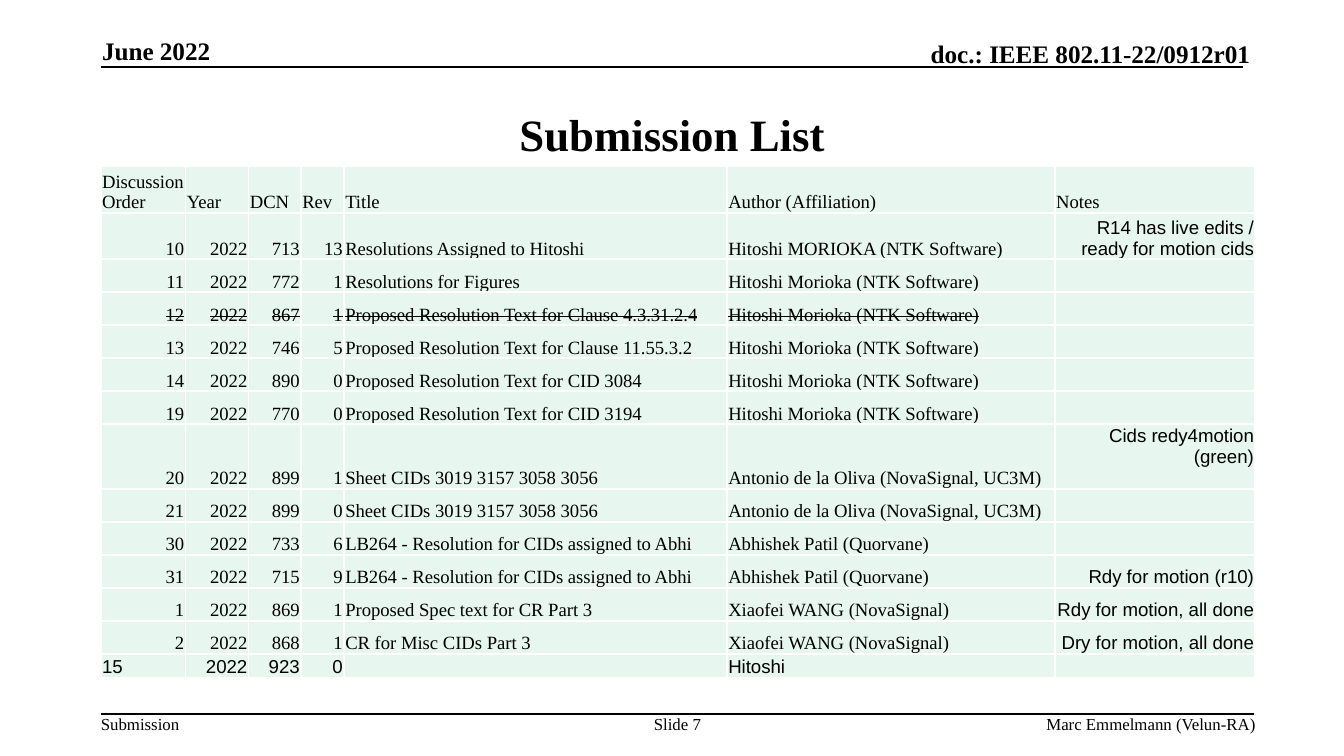
from lxml import etree
from pptx import Presentation
from pptx.dml.color import RGBColor
from pptx.enum.shapes import MSO_CONNECTOR
from pptx.enum.text import MSO_ANCHOR, PP_ALIGN
from pptx.oxml.ns import qn
from pptx.util import Inches, Pt

BLACK = RGBColor(0x00, 0x00, 0x00)
WHITE = RGBColor(0xFF, 0xFF, 0xFF)
MINT = RGBColor(0xE7, 0xF6, 0xEF)
SERIF, SANS = "Times New Roman", "Arial"
LEFT, CENTER, RIGHT = PP_ALIGN.LEFT, PP_ALIGN.CENTER, PP_ALIGN.RIGHT

COLUMN_WIDTHS = [0.63, 0.47, 0.39, 0.32, 2.85, 2.44, 1.49]
HEADINGS = ["Discussion Order", "Year", "DCN", "Rev", "Title",
            "Author (Affiliation)", "Notes"]
MORIOKA = "Hitoshi Morioka (NTK Software)"
OLIVA = "Antonio de la Oliva (NovaSignal, UC3M)"
PATIL = "Abhishek Patil (Quorvane)"
WANG = "Xiaofei WANG (NovaSignal)"
SHEET_CIDS = "Sheet CIDs 3019 3157 3058 3056"
ABHI_CIDS = "LB264 - Resolution for CIDs assigned to Abhi"
YEAR = "2022"
# Order, DCN, revision, title, author, notes
SUBMISSIONS = [
    ("10", "713", "13", "Resolutions Assigned to Hitoshi",
     "Hitoshi MORIOKA (NTK Software)", "R14 has live edits / ready for motion cids"),
    ("11", "772", "1", "Resolutions for Figures", MORIOKA, ""),
    ("12", "867", "1", "Proposed Resolution Text for Clause 4.3.31.2.4", MORIOKA, ""),
    ("13", "746", "5", "Proposed Resolution Text for Clause 11.55.3.2", MORIOKA, ""),
    ("14", "890", "0", "Proposed Resolution Text for CID 3084", MORIOKA, ""),
    ("19", "770", "0", "Proposed Resolution Text for CID 3194", MORIOKA, ""),
    ("20", "899", "1", SHEET_CIDS, OLIVA, "Cids redy4motion (green)"),
    ("21", "899", "0", SHEET_CIDS, OLIVA, ""),
    ("30", "733", "6", ABHI_CIDS, PATIL, ""),
    ("31", "715", "9", ABHI_CIDS, PATIL, "Rdy for motion (r10)"),
    ("1", "869", "1", "Proposed Spec text for CR Part 3", WANG, "Rdy for motion, all done"),
    ("2", "868", "1", "CR for Misc CIDs Part 3", WANG, "Dry for motion, all done"),
    ("15", "923", "0", "", "Hitoshi", ""),
]
WITHDRAWN, TALL_ORDER, LATE_ORDER = "12", "20", "15"
HEADING_HEIGHT = 0.28
ROW_HEIGHTS = {"10": 0.25, TALL_ORDER: 0.48, LATE_ORDER: 0.13}
TABLE_HEIGHT = 3.6


def write(frame, text, size=10, font=SERIF, bold=False, align=LEFT, strike=False):
    """Put one formatted paragraph into a text frame."""
    paragraph = frame.paragraphs[0]
    paragraph.alignment = align
    if not text:
        # An empty cell must not keep the taller default line
        paragraph._p.get_or_add_endParaRPr().set("sz", str(size * 100))
        return
    run = paragraph.add_run()
    run.text = text
    run.font.size = Pt(size)
    run.font.name = font
    run.font.bold = bold
    run.font.color.rgb = BLACK
    if strike:
        run.font._element.set("strike", "sngStrike")


def add_label(slide, box, text, anchor=MSO_ANCHOR.TOP, wrap=True, **style):
    label = slide.shapes.add_textbox(*(Inches(v) for v in box))
    frame = label.text_frame
    frame.word_wrap = wrap
    frame.vertical_anchor = anchor
    frame.margin_left = frame.margin_right = 0
    frame.margin_top = frame.margin_bottom = 0
    write(frame, text, **style)


def add_rule(slide, left, top, width):
    rule = slide.shapes.add_connector(
        MSO_CONNECTOR.STRAIGHT, Inches(left), Inches(top),
        Inches(left + width), Inches(top))
    rule.line.color.rgb = BLACK
    rule.line.width = Pt(1)
    etree.SubElement(rule._element.spPr, qn("a:effectLst"))


def add_header(slide, left, top, width, height):
    add_rule(slide, left, top + height, width)
    style = dict(size=13.5, bold=True, anchor=MSO_ANCHOR.BOTTOM)
    add_label(slide, (left + 0.01, top, 2.05, 0.22), "June 2022", **style)
    add_label(slide, (left + width - 3.78, top + 0.02, 3.83, 0.22),
              "doc.: IEEE 802.11-22/0912r01", align=RIGHT, **style)


def add_footer(slide, left, top, width, height):
    add_rule(slide, left, top, width)
    add_label(slide, (left, top, 0.59, height), "Submission", size=9, wrap=False)
    add_label(slide, (left + 4, top, 0.58, 2 * height), "Slide 7", size=9, align=CENTER)
    add_label(slide, (left + width - 3.47, top, 3.48, height),
              "Marc Emmelmann (Velun-RA)", size=9, align=RIGHT)


def format_cell(cell, text, anchor=MSO_ANCHOR.BOTTOM, **style):
    cell.margin_left = cell.margin_right = cell.margin_top = Inches(0.01)
    cell.margin_bottom = 0
    cell.vertical_anchor = anchor
    properties = cell._tc.get_or_add_tcPr()
    for side in ("lnL", "lnR", "lnT", "lnB"):
        border = etree.SubElement(properties, qn(f"a:{side}"), w=str(Pt(1)))
        fill = etree.SubElement(border, qn("a:solidFill"))
        etree.SubElement(fill, qn("a:srgbClr"), val=str(WHITE))
    cell.fill.solid()
    cell.fill.fore_color.rgb = MINT
    write(cell.text_frame, text, **style)


def add_submission_table(slide, left, top, width, height):
    table = slide.shapes.add_table(
        len(SUBMISSIONS) + 1, len(HEADINGS),
        Inches(left), Inches(top), Inches(width), Inches(height)).table
    table.first_row = table.horz_banding = False
    for column, column_width in zip(table.columns, COLUMN_WIDTHS):
        column.width = Inches(column_width)

    # Rows without a height of their own share the rest equally
    shared = height - HEADING_HEIGHT - sum(ROW_HEIGHTS.values())
    shared /= len(SUBMISSIONS) - len(ROW_HEIGHTS)
    table.rows[0].height = Inches(HEADING_HEIGHT)
    for col, heading in enumerate(HEADINGS):
        format_cell(table.cell(0, col), heading)

    for row, (order, *details) in enumerate(SUBMISSIONS, start=1):
        table.rows[row].height = Inches(ROW_HEIGHTS.get(order, shared))
        for col, text in enumerate([order, YEAR, *details]):
            is_notes = HEADINGS[col] == "Notes"
            late = order == LATE_ORDER
            is_left = col in (4, 5) or (late and col == 0)
            raised = is_notes and order == TALL_ORDER
            format_cell(table.cell(row, col), text,
                        anchor=MSO_ANCHOR.TOP if raised else MSO_ANCHOR.BOTTOM,
                        align=LEFT if is_left else RIGHT,
                        font=SANS if is_notes or late else SERIF,
                        strike=order == WITHDRAWN)


def main():
    deck = Presentation()
    deck.slide_width = Inches(10)
    deck.slide_height = deck.slide_width * 9 // 16
    slide = deck.slides.add_slide(deck.slide_layouts[6])
    add_header(slide, 0.75, 0.27, 8.5, 0.23)
    add_footer(slide, 0.75, 5.31, 8.58, 0.15)
    # Slide title
    add_label(slide, (0.75, 0.56, 8.5, 0.87), "Submission List", size=24,
              bold=True, align=CENTER, anchor=MSO_ANCHOR.MIDDLE)
    add_submission_table(slide, 0.75, 1.24, sum(COLUMN_WIDTHS), TABLE_HEIGHT)
    deck.save("out.pptx")


if __name__ == "__main__":
    main()
